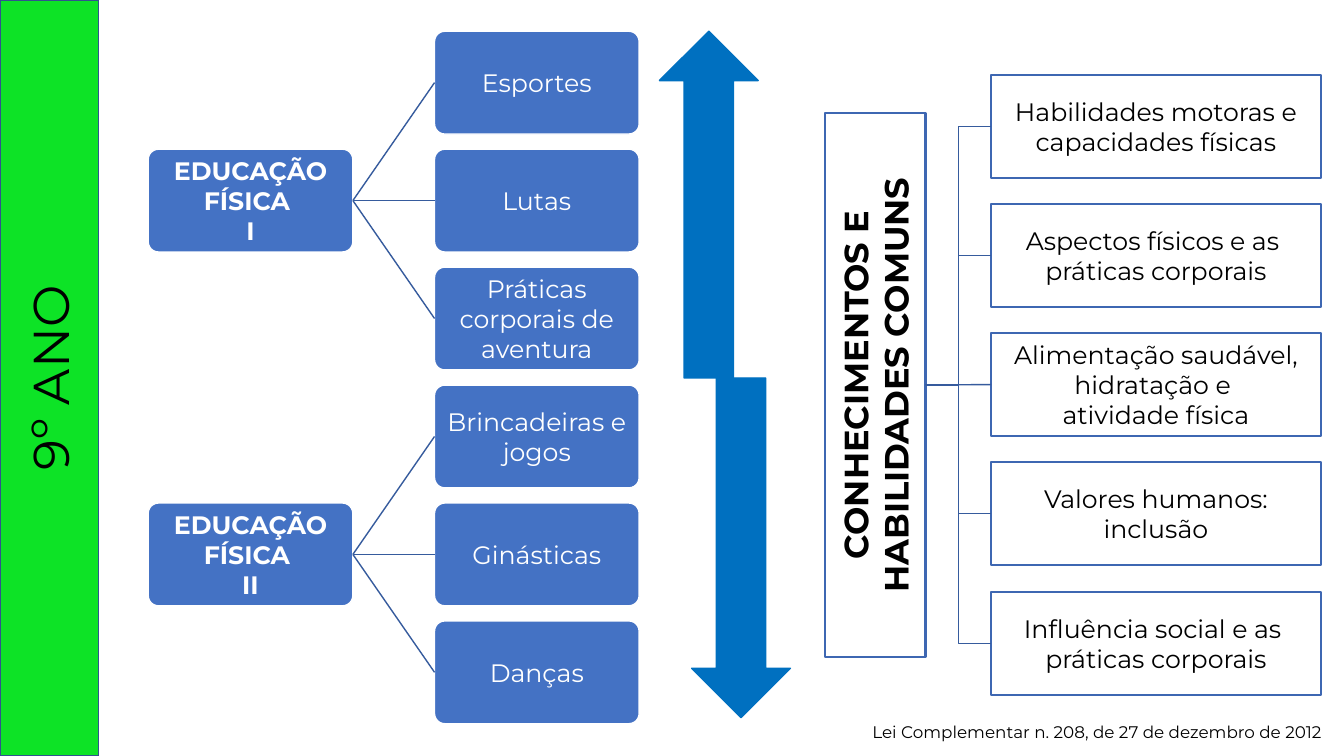
from pptx import Presentation
from pptx.dml.color import RGBColor
from pptx.enum.shapes import MSO_CONNECTOR, MSO_SHAPE
from pptx.enum.text import MSO_ANCHOR, PP_ALIGN
from pptx.oxml.ns import qn
from pptx.util import Pt

PX = 9144  # 100 px to the inch
FONT = "Montserrat"
COLORS = {
    "white": "FFFFFF", "black": "000000", "box": "4472C4", "link": "365B9D",
    "frame": "3E67B2", "arrow": "0070C0", "strip": "0DE326", "strip_edge": "31538F",
}
RECT, ROUNDED = MSO_SHAPE.RECTANGLE, MSO_SHAPE.ROUNDED_RECTANGLE
UP, DOWN = MSO_SHAPE.UP_ARROW, MSO_SHAPE.DOWN_ARROW
STRAIGHT, ELBOW = MSO_CONNECTOR.STRAIGHT, MSO_CONNECTOR.ELBOW
CENTER, RIGHT, MIDDLE = PP_ALIGN.CENTER, PP_ALIGN.RIGHT, MSO_ANCHOR.MIDDLE
LEFT_SITE, RIGHT_SITE = 1, 3

prs = Presentation()
prs.slide_width, prs.slide_height = 1333 * PX, 750 * PX
slide = prs.slides.add_slide(prs.slide_layouts[6])


def add_box(kind, left, top, width, height, fill, edge, edge_pt, lines=(),
            color="black", size=18, bold=False, inset=1, vertical=False):
    box = slide.shapes.add_shape(kind, left * PX, top * PX, width * PX, height * PX)
    box.shadow.inherit = False
    box.fill.solid()
    box.fill.fore_color.rgb = RGBColor.from_string(COLORS[fill])
    box.line.color.rgb = RGBColor.from_string(COLORS[edge])
    box.line.width = Pt(edge_pt)
    if kind == ROUNDED:
        box.adjustments[0] = 0.1
    frame = box.text_frame
    frame.word_wrap = True
    frame.vertical_anchor = MIDDLE
    frame.margin_left = frame.margin_right = inset * PX
    frame.margin_top = frame.margin_bottom = inset * PX
    if vertical:
        frame._txBody.bodyPr.set("vert", "vert270")
    for i, line in enumerate(lines):
        paragraph = frame.add_paragraph() if i else frame.paragraphs[0]
        paragraph.alignment = CENTER
        run = paragraph.add_run()
        run.text = line
        run.font.name, run.font.size, run.font.bold = FONT, Pt(size), bold
        run.font.color.rgb = RGBColor.from_string(COLORS[color])
    return box


def add_link(kind, parent, child):
    link = slide.shapes.add_connector(kind, 0, 0, 0, 0)
    link.begin_connect(parent, RIGHT_SITE)
    link.end_connect(child, LEFT_SITE)
    link.line.color.rgb = RGBColor.from_string(COLORS["link"])
    link.line.width = Pt(1)
    properties = link._element.spPr
    properties.append(properties.makeelement(qn("a:effectLst"), {}))


# Two subjects, each with three practices
subjects = [
    ("I", ["Esportes", "Lutas", "Práticas corporais de aventura"]),
    ("II", ["Brincadeiras e jogos", "Ginásticas", "Danças"]),
]
for s, (numeral, practices) in enumerate(subjects):
    tops = [31 + 117 * (3 * s + i) for i in range(3)]
    subject = add_box(ROUNDED, 147, tops[1], 203, 102, "box", "white", 1,
                      ["EDUCAÇÃO FÍSICA ", numeral], "white", bold=True, inset=4)
    for top, practice in zip(tops, practices):
        practice_box = add_box(ROUNDED, 431, top, 203, 102, "box", "white", 1,
                               [practice], "white", inset=4)
        add_link(STRAIGHT, subject, practice_box)

# Common knowledge and its five topics
common = add_box(RECT, 818, 112, 100, 540, "white", "frame", 1.5,
                 ["CONHECIMENTOS E HABILIDADES COMUNS"],
                 size=24, bold=True, vertical=True)
topics = [
    ["Habilidades motoras e capacidades físicas"],
    ["Aspectos físicos e as ", "práticas corporais"],
    ["Alimentação saudável, hidratação e ", "atividade física"],
    ["Valores humanos: inclusão"],
    ["Influência social e as ", "práticas corporais"],
]
for i, lines in enumerate(topics):
    topic = add_box(RECT, 983, 74 + 513 * i // 4, 327, 103, "white", "frame", 1.5, lines)
    add_link(STRAIGHT if i == 2 else ELBOW, common, topic)

# Opposing arrows
add_box(UP, 654, 31, 98, 344, "arrow", "arrow", 1)
add_box(DOWN, 686, 375, 98, 337, "arrow", "arrow", 1)

# Legal reference
reference = slide.shapes.add_textbox(654 * PX, 711 * PX, 667 * PX, 30 * PX)
reference.text_frame.word_wrap = True
citation = reference.text_frame.paragraphs[0]
citation.alignment = RIGHT
run = citation.add_run()
run.text = "Lei Complementar n. 208, de 27 de dezembro de 2012"
run.font.name, run.font.size = FONT, Pt(12)
run.font.color.rgb = RGBColor.from_string(COLORS["black"])

# School year strip
add_box(RECT, 0, 0, 98, 750, "strip", "strip_edge", 1, ["9º ANO"],
        size=36, inset=5, vertical=True)

prs.save("out.pptx")
